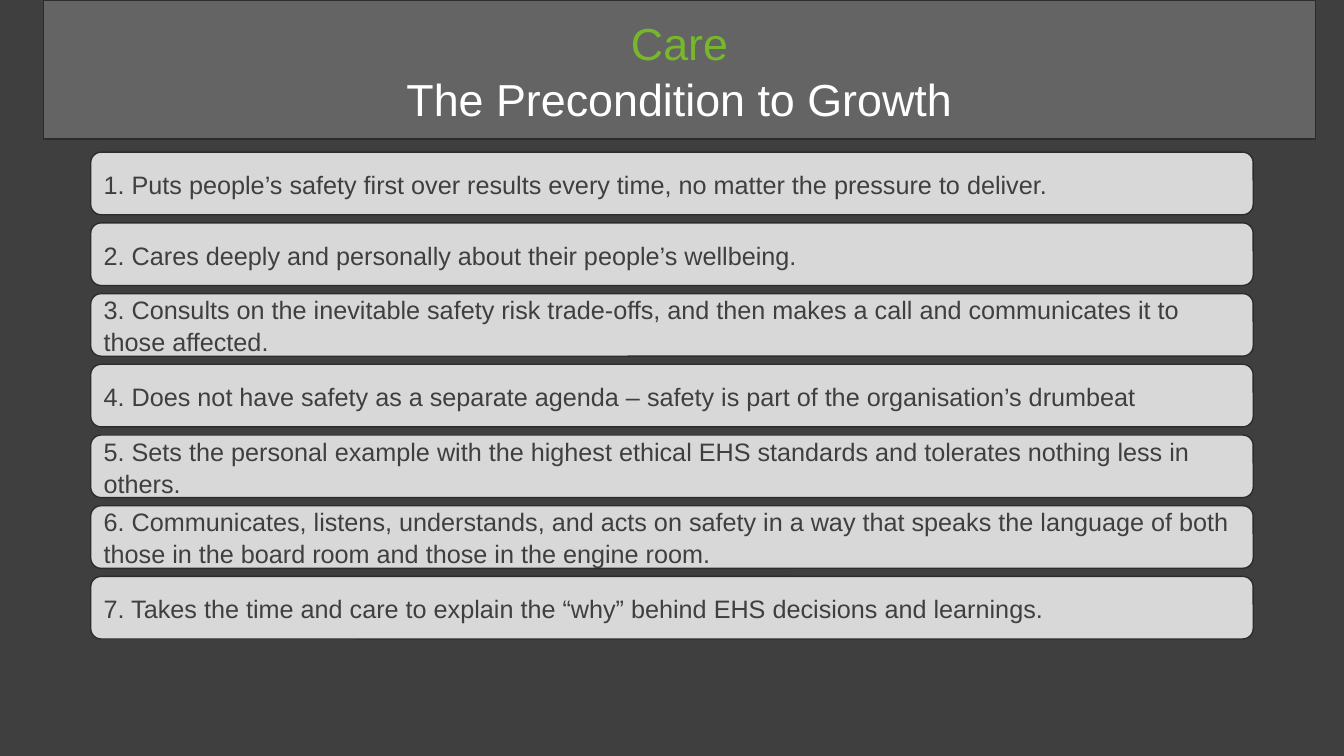
from dataclasses import dataclass

from lxml import etree
from pptx import Presentation
from pptx import util as u
from pptx.dml.color import RGBColor
from pptx.enum import shapes, text
from pptx.oxml.ns import qn


@dataclass(frozen=True)
class Theme:
    background: RGBColor = RGBColor.from_string("3F3F3F")
    banner: RGBColor = RGBColor.from_string("646464")
    row: RGBColor = RGBColor.from_string("D8D8D8")
    outline: RGBColor = RGBColor.from_string("2C2C2C")
    accent: RGBColor = RGBColor.from_string("76B82A")
    light: RGBColor = RGBColor.from_string("FFFFFF")
    dark: RGBColor = RGBColor.from_string("3F3F3F")
    font: str = "Arial"
    title_size: int = 32
    row_size: int = 18
    line_spacing: float = 1.05


THEME = Theme()

BEHAVIOURS = [
    "Puts people’s safety first over results every time, no matter the pressure to deliver.",
    "Cares deeply and personally about their people’s wellbeing.",
    "Consults on the inevitable safety risk trade-offs, and then makes a call "
    "and communicates it to those affected.",
    "Does not have safety as a separate agenda – safety is part of the organisation’s drumbeat",
    "Sets the personal example with the highest ethical EHS standards "
    "and tolerates nothing less in others.",
    "Communicates, listens, understands, and acts on safety in a way that speaks "
    "the language of both those in the board room and those in the engine room.",
    "Takes the time and care to explain the “why” behind EHS decisions and learnings.",
]


def style_panel(panel, fill):
    panel.fill.solid()
    panel.fill.fore_color.rgb = fill
    panel.line.color.rgb = THEME.outline
    panel.line.width = u.Pt(1)
    frame = panel.text_frame
    frame.word_wrap = True
    frame.auto_size = text.MSO_AUTO_SIZE.NONE
    frame.vertical_anchor = text.MSO_ANCHOR.MIDDLE


def write_lines(frame, lines, colours, size, alignment):
    frame.text = "\n".join(lines)
    for para, colour in zip(frame.paragraphs, colours):
        para.alignment = alignment
        para.line_spacing = THEME.line_spacing
        for span in para.runs:
            span.font.name = THEME.font
            span.font.size = u.Pt(size)
            span.font.color.rgb = colour


def add_banner(page, left, top, width, height):
    title = page.shapes.title
    title.left, title.top = u.Inches(left), u.Inches(top)
    title.width, title.height = u.Inches(width), u.Inches(height)
    # Give the title placeholder rounded corners
    geometry = etree.SubElement(title._element.spPr, qn("a:prstGeom"), prst="roundRect")
    etree.SubElement(geometry, qn("a:avLst"))
    style_panel(title, THEME.banner)
    write_lines(title.text_frame, ["Care", "The Precondition to Growth"],
                [THEME.accent, THEME.light], THEME.title_size, text.PP_ALIGN.CENTER)


def add_behaviour_rows(page, left, top, width, height, gap=0.08):
    row_height = (height + gap) / len(BEHAVIOURS) - gap
    for index, behaviour in enumerate(BEHAVIOURS):
        row_top = top + index * (row_height + gap)
        row = page.shapes.add_shape(
            shapes.MSO_SHAPE.ROUNDED_RECTANGLE, u.Inches(left), u.Inches(row_top),
            u.Inches(width), u.Inches(row_height))
        row.shadow.inherit = False
        style_panel(row, THEME.row)
        write_lines(row.text_frame, [f"{index + 1}. {behaviour}"],
                    [THEME.dark], THEME.row_size, text.PP_ALIGN.LEFT)


def main():
    deck = Presentation()
    deck.slide_width, deck.slide_height = u.Inches(13.33), u.Inches(7.5)
    page = deck.slides.add_slide(deck.slide_layouts.get_by_name("Title Only"))
    page.background.fill.solid()
    page.background.fill.fore_color.rgb = THEME.background

    add_banner(page, 0.43, 0, 12.62, 1.38)
    add_behaviour_rows(page, 0.9, 1.51, 11.53, 4.83)
    deck.save("out.pptx")


if __name__ == "__main__":
    main()
